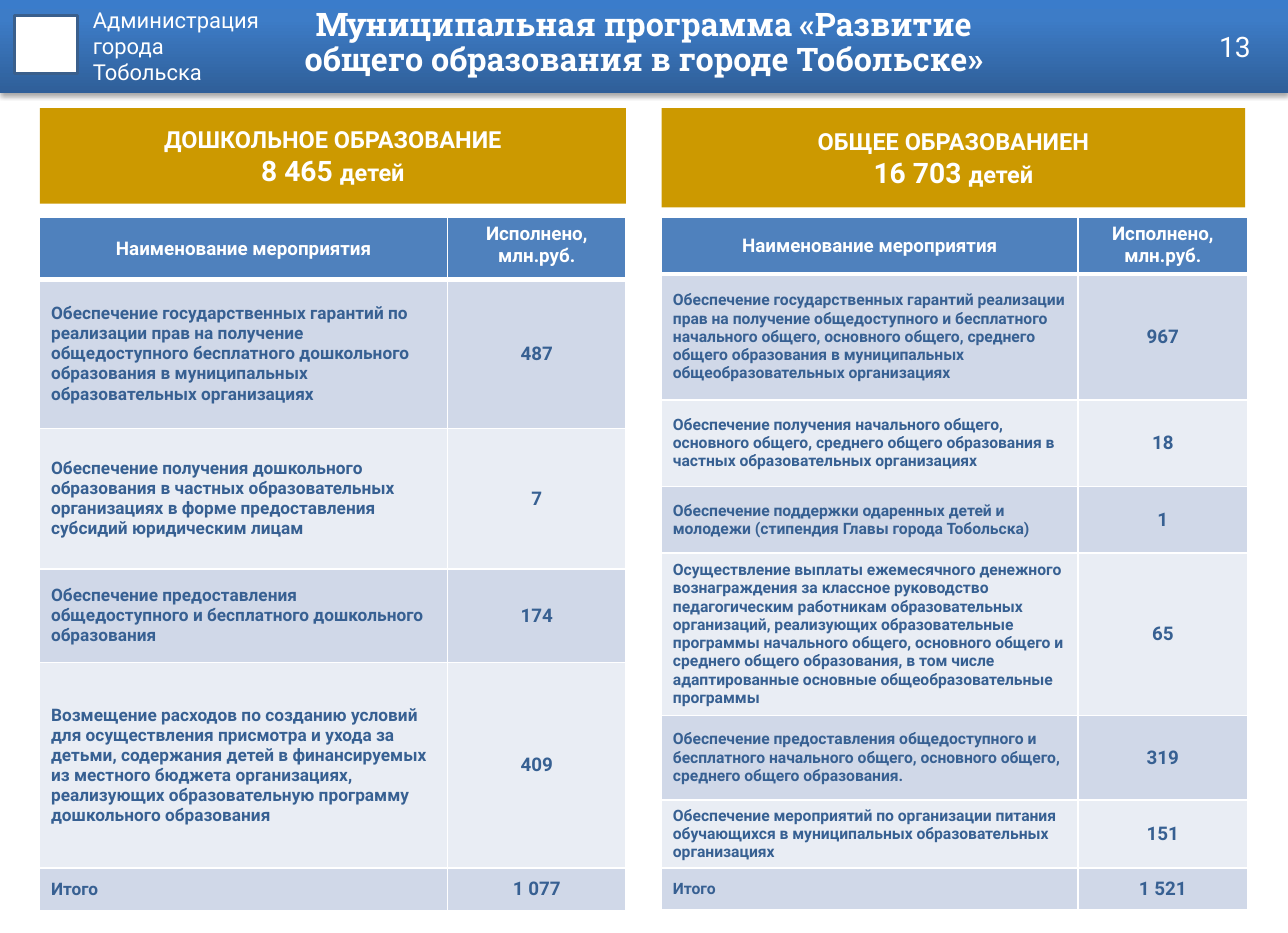
from lxml.etree import SubElement
from pptx import Presentation
from pptx.dml.color import RGBColor
from pptx.enum.shapes import MSO_SHAPE
from pptx.enum.text import MSO_ANCHOR, MSO_AUTO_SIZE, PP_ALIGN
from pptx.oxml.ns import qn
from pptx.util import Pt

WHITE, GOLD, BLUE, NAVY = "FFFFFF", "CC9900", "4F81BD", "376092"
BANDS = ("D0D8E8", "E9EDF4")
LEFT, CENTER, RIGHT = PP_ALIGN.LEFT, PP_ALIGN.CENTER, PP_ALIGN.RIGHT


def rgb(value):
    return RGBColor.from_string(value)


def add_color(parent, value, alpha=100):
    clr = SubElement(parent, qn("a:srgbClr"), val=value)
    if alpha < 100:
        SubElement(clr, qn("a:alpha"), val=str(alpha * 1000))


class SlideBuilder:
    font = "Roboto"

    def __init__(self, slide):
        self.s = slide

    def add_runs(self, tf, paragraphs, color=WHITE, bold=False, align=LEFT, font=None):
        """Each paragraph is a list of (text, size) runs."""
        for i, runs in enumerate(paragraphs):
            p = tf.add_paragraph() if i else tf.paragraphs[0]
            p.alignment = align
            for text, size in runs:
                r = p.add_run()
                r.text = text
                r.font.name = font or self.font
                r.font.size = Pt(size)
                r.font.bold = bold
                r.font.color.rgb = rgb(color)

    def frame(self, tf, anchor):
        tf.word_wrap = True
        tf.auto_size = MSO_AUTO_SIZE.NONE
        tf.vertical_anchor = anchor
        tf.margin_left = tf.margin_right = Pt(8)
        tf.margin_top = tf.margin_bottom = Pt(4)

    def title(self, box, text, size):
        sp = self.s.shapes.title
        sp.left, sp.top, sp.width, sp.height = map(Pt, box)
        sp.element.getparent().append(sp.element)  # above the header band
        self.frame(sp.text_frame, MSO_ANCHOR.MIDDLE)
        self.add_runs(sp.text_frame, [[(text, size)]], bold=True, align=CENTER,
                      font="Roboto Slab")
        sp.text_frame.paragraphs[0].line_spacing = 0.9

    def text(self, box, paragraphs, anchor=MSO_ANCHOR.TOP, align=LEFT):
        sp = self.s.shapes.add_textbox(*map(Pt, box))
        self.frame(sp.text_frame, anchor)
        self.add_runs(sp.text_frame, paragraphs, align=align)

    def rect(self, box, fill, line=None, paragraphs=()):
        sp = self.s.shapes.add_shape(MSO_SHAPE.RECTANGLE, *map(Pt, box))
        sp.shadow.inherit = False
        sp.fill.solid()
        sp.fill.fore_color.rgb = rgb(fill)
        if line:
            sp.line.color.rgb = rgb(line)
            sp.line.width = Pt(2)
        else:
            sp.line.fill.background()
        self.frame(sp.text_frame, MSO_ANCHOR.MIDDLE)
        self.add_runs(sp.text_frame, paragraphs, bold=True, align=CENTER)
        return sp

    def header_band(self, box, stops):
        sp = self.rect(box, WHITE)
        sp.fill.gradient()
        sp.fill.gradient_angle = 90
        gs_list = sp.element.spPr.find(".//" + qn("a:gsLst"))
        gs_list.clear()
        for pos, color in stops:
            add_color(SubElement(gs_list, qn("a:gs"), pos=str(pos * 1000)), color)
        effects = sp.element.spPr.find(qn("a:effectLst"))
        shadow = SubElement(effects, qn("a:outerShdw"), blurRad=str(Pt(3.1)),
                            dist=str(Pt(1.8)), dir="5400000", rotWithShape="0")
        add_color(shadow, "000000", 35)

    def cell(self, cell, text, size, fill, color, align, anchor, borders):
        tc_pr = cell._tc.get_or_add_tcPr()
        for side, width in borders.items():
            ln = SubElement(tc_pr, qn("a:ln" + side), w=str(Pt(width)))
            add_color(SubElement(ln, qn("a:solidFill")), WHITE)
        cell.fill.solid()
        cell.fill.fore_color.rgb = rgb(fill)
        cell.vertical_anchor = anchor
        self.add_runs(cell.text_frame, [[(text, size)]], color, True, align)

    def table(self, left, top, widths, heights, rows, size):
        gf = self.s.shapes.add_table(len(rows), len(widths), Pt(left), Pt(top),
                                     Pt(sum(widths)), Pt(sum(heights)))
        table = gf.table
        for col, width in zip(table.columns, widths):
            col.width = Pt(width)
        for i, (row, height, texts) in enumerate(zip(table.rows, heights, rows)):
            row.height = Pt(height)
            head = i == 0
            borders = {"L": 1, "R": 1, "T": 3 if i == 1 else 1, "B": 3 if head else 1}
            for j, text in enumerate(texts):
                self.cell(table.cell(i, j), text,
                          12 if head or j else size,
                          BLUE if head else BANDS[(i - 1) % 2],
                          WHITE if head else NAVY,
                          CENTER if head or j else LEFT,
                          MSO_ANCHOR.TOP if head and j else MSO_ANCHOR.MIDDLE,
                          borders)


HEADINGS = ("Наименование мероприятия", "Исполнено, млн.руб.")
PRESCHOOL = [
    HEADINGS,
    ("Обеспечение государственных гарантий по реализации прав на получение "
     "общедоступного бесплатного дошкольного образования в муниципальных "
     "образовательных организациях", "487"),
    ("Обеспечение получения дошкольного образования в частных образовательных "
     "организациях в форме предоставления субсидий юридическим лицам", "7"),
    ("Обеспечение предоставления общедоступного и бесплатного дошкольного "
     "образования", "174"),
    ("Возмещение расходов по созданию условий для осуществления присмотра и ухода "
     "за детьми, содержания детей в финансируемых из местного бюджета организациях, "
     "реализующих образовательную программу дошкольного образования", "409"),
    ("Итого", "1 077"),
]
SCHOOL = [
    HEADINGS,
    ("Обеспечение государственных гарантий реализации прав на получение "
     "общедоступного и бесплатного начального общего, основного общего, среднего "
     "общего образования в муниципальных общеобразовательных организациях", "967"),
    ("Обеспечение получения начального общего, основного общего, среднего общего "
     "образования в частных образовательных организациях", "18"),
    ("Обеспечение поддержки одаренных детей и молодежи (стипендия Главы города "
     "Тобольска)", "1"),
    ("Осуществление выплаты ежемесячного денежного вознаграждения за классное "
     "руководство педагогическим работникам образовательных организаций, реализующих "
     "образовательные программы начального общего, основного общего и среднего общего "
     "образования, в том числе адаптированные основные общеобразовательные "
     "программы", "65"),
    ("Обеспечение предоставления общедоступного и бесплатного начального общего, "
     "основного общего, среднего общего образования.", "319"),
    ("Обеспечение мероприятий по организации питания обучающихся в муниципальных "
     "образовательных организациях", "151"),
    ("Итого", "1 521"),
]


def main():
    prs = Presentation()
    prs.slide_width, prs.slide_height = Pt(822.24), Pt(595.44)
    b = SlideBuilder(prs.slides.add_slide(prs.slide_layouts[5]))

    # Header
    b.header_band((0, 0, 822.24, 59.3),
                  [(0, "2F5F99"), (80, "3D7CC7"), (100, "3A7CCB")])
    b.rect((9.4, 9.8, 40, 37.2), WHITE, line="3A5F8C")
    b.text((51.3, 0, 193, 76),
           [[(word, 14)] for word in ("Администрация", "города", "Тобольска")])
    b.title((167, 0, 488, 56),
            "Муниципальная программа «Развитие общего образования в городе Тобольске»",
            20.7)
    b.text((615, 13.7, 191.5, 31.7), [[("13", 18)]], MSO_ANCHOR.MIDDLE, RIGHT)

    # Two columns: gold heading and table of activities
    columns = [
        (25.4, 374.2, 61, "ДОШКОЛЬНОЕ ОБРАЗОВАНИЕ", "8 465 ", PRESCHOOL, 11,
         (260.4, 113.8), (39.4, 95, 89.7, 59.9, 131, 27.3)),
        (422.4, 372.5, 63.4, "ОБЩЕЕ ОБРАЗОВАНИЕН", "16 703 ", SCHOOL, 10,
         (265.8, 108.4), (36, 80.2, 55.5, 42.2, 103.7, 54, 43.4, 26.4)),
    ]
    for left, width, height, name, count, rows, size, widths, heights in columns:
        b.rect((left, 69, width, height), GOLD,
               paragraphs=[[(name, 15)], [(count, 18), ("детей", 15)]])
        b.table(left, 139, widths, heights, rows, size)

    prs.save("out.pptx")


if __name__ == "__main__":
    main()
